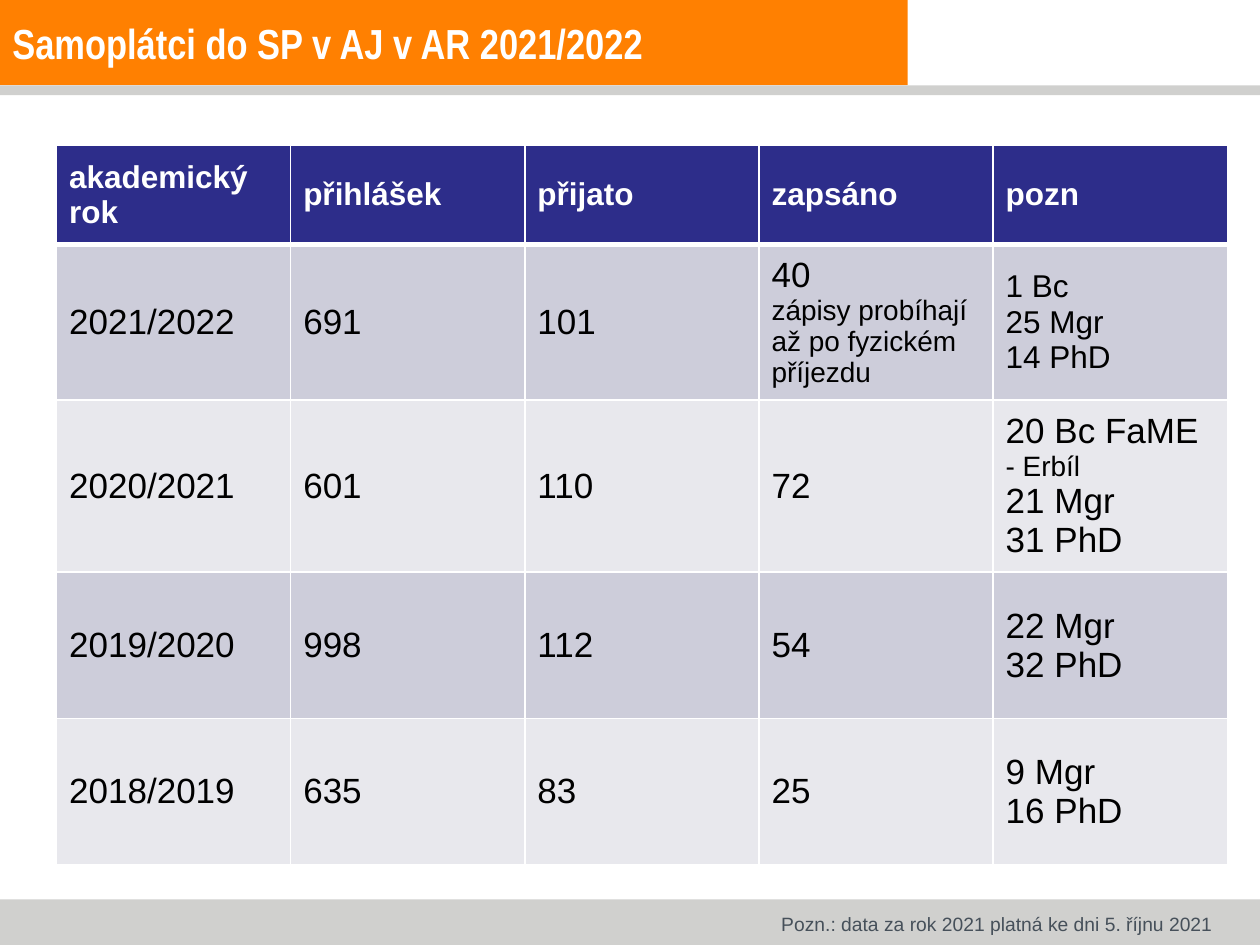
"""Build the slide on self-paying students by academic year."""
from lxml import etree
from pptx import Presentation
from pptx import util as u
from pptx.dml.color import RGBColor
from pptx.enum import shapes, text
from pptx.oxml import ns

HUES = {
    "orange": "FF8001", "grey": "D0D0CE", "white": "FFFFFF", "black": "000000",
    "navy": "2D2D8A", "dark": "CDCDDA", "light": "E8E8ED", "note": "46505A",
    "shade": "808080",
}
HEAD = ["akademický rok", "přihlášek", "přijato", "zapsáno", "pozn"]
ROWS = [
    ["2021/2022", "691", "101",
     [[("40", 20)], [("zápisy probíhají až po fyzickém příjezdu", 16)]],
     [[("1 Bc", 18)], [("25 Mgr", 18)], [("14 PhD", 18)]]],
    ["2020/2021", "601", "110", "72",
     [[("20 Bc FaME ", 20), ("- Erbíl", 16)], [("21 Mgr", 20)], [("31 PhD", 20)]]],
    ["2019/2020", "998", "112", "54", [[("22 Mgr", 20)], [("32 PhD", 20)]]],
    ["2018/2019", "635", "83", "25", [[("9 Mgr", 20)], [("16 PhD", 20)]]],
]


def tint(fill, hue):
    """Fill with a solid named colour."""
    fill.solid()
    fill.fore_color.rgb = RGBColor.from_string(HUES[hue])


def style(font, size, hue, bold=False, face="Arial"):
    """Set the look of a font."""
    font.size, font.bold, font.name = u.Pt(size), bold, face
    tint(font.fill, hue)


def add_bar(slide, left, top, width, height, hue):
    """Add a plain coloured bar."""
    bar = slide.shapes.add_shape(
        shapes.MSO_SHAPE.RECTANGLE, u.Cm(left), u.Cm(top), u.Cm(width), u.Cm(height))
    bar.shadow.inherit = False
    tint(bar.fill, hue)
    bar.line.fill.background()


def add_text(slide, left, top, width, height, words, wrap):
    """Add a text box and return its frame."""
    box = slide.shapes.add_textbox(u.Cm(left), u.Cm(top), u.Cm(width), u.Cm(height))
    frame = box.text_frame
    frame.word_wrap = wrap
    frame.text = words
    return frame


def cast(run):
    """Give a run a grey drop shadow."""
    props = run.font._element if hasattr(run.font, "_element") else run._r.get_or_add_rPr()
    effect = etree.SubElement(props, ns.qn("a:effectLst"))
    drop = etree.SubElement(effect, ns.qn("a:outerShdw"),
                            dist="38100", dir="2700000", algn="tl")
    etree.SubElement(drop, ns.qn("a:srgbClr"), val=HUES["shade"])


def edge(cell, top, base):
    """Draw white cell borders with the given top and base widths."""
    props = cell._tc.get_or_add_tcPr()
    for spot, (side, width) in enumerate(
            [("lnL", 1), ("lnR", 1), ("lnT", top), ("lnB", base)]):
        line = etree.Element(ns.qn("a:" + side), w=str(u.Pt(width)))
        fill = etree.SubElement(line, ns.qn("a:solidFill"))
        etree.SubElement(fill, ns.qn("a:srgbClr"), val=HUES["white"])
        props.insert(spot, line)


def fill_cell(cell, lines, hue, ink, bold):
    """Write sized runs, line by line, into a coloured cell."""
    tint(cell.fill, hue)
    cell.vertical_anchor = text.MSO_ANCHOR.MIDDLE
    frame = cell.text_frame
    for spot, parts in enumerate(lines):
        para = frame.add_paragraph() if spot else frame.paragraphs[0]
        style(para.font, parts[0][1], ink, bold)
        for words, size in parts:
            run = para.add_run()
            run.text = words
            if size != parts[0][1]:
                run.font.size = u.Pt(size)


def add_grid(slide):
    """Add the table of applicants by year."""
    grid = slide.shapes.add_table(
        len(ROWS) + 1, len(HEAD), u.Cm(1.14), u.Cm(2.92), u.Cm(23.6), u.Cm(13.81)).table
    for col in grid.columns:
        col.width = u.Cm(4.72)
    for r, row in enumerate([HEAD] + ROWS):
        grid.rows[r].height = u.Cm(2.95 if r else 2.01)
        hue = ("dark" if r % 2 else "light") if r else "navy"
        for c, item in enumerate(row):
            lines = [[(item, 20 if r else 18)]] if isinstance(item, str) else item
            cell = grid.cell(r, c)
            fill_cell(cell, lines, hue, "black" if r else "white", r == 0)
            edge(cell, 3 if r == 1 else 1, 1 if r else 3)


def main():
    """Build and save the slide."""
    deck = Presentation()
    deck.slide_width, deck.slide_height = u.Cm(25.4), u.Cm(19.05)
    slide = deck.slides.add_slide(deck.slide_layouts[6])
    add_bar(slide, 0, 0, 18.3, 1.72, "orange")
    add_bar(slide, 0, 18.13, 25.4, 0.92, "grey")
    add_bar(slide, 0, 1.72, 25.4, 0.2, "grey")
    title = add_text(slide, 0, 0, 18.3, 1.72, "Samoplátci do SP v AJ v AR 2021/2022", True)
    title.vertical_anchor = text.MSO_ANCHOR.MIDDLE
    para = title.paragraphs[0]
    style(para.font, 24, "white", True, "Arial Narrow")
    cast(para.runs[0])
    note = add_text(slide, 15.5, 18.26, 9.24, 0.73,
                    "Pozn.: data za rok 2021 platná ke dni 5. říjnu 2021", False)
    style(note.paragraphs[0].font, 11, "note")
    add_grid(slide)
    deck.save("out.pptx")


if __name__ == "__main__":
    main()
